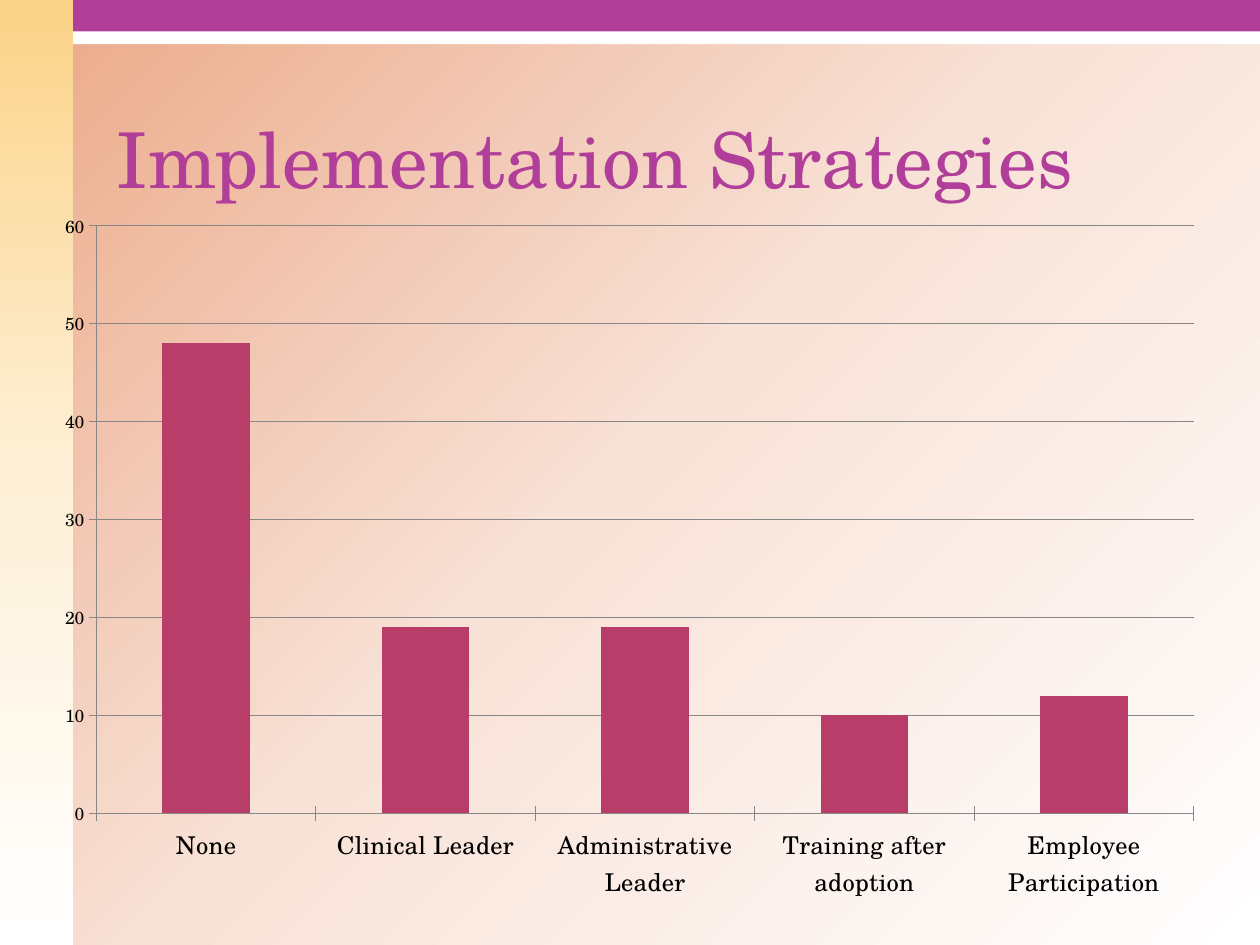
from copy import deepcopy

from pptx import Presentation
from pptx.chart.data import CategoryChartData
from pptx.dml.color import RGBColor
from pptx.enum.chart import XL_CHART_TYPE, XL_TICK_MARK
from pptx.enum.shapes import MSO_SHAPE
from pptx.enum.text import MSO_ANCHOR
from pptx.oxml.ns import qn
from pptx.util import Inches, Pt

COLUMN = XL_CHART_TYPE.COLUMN_CLUSTERED
CROSS = XL_TICK_MARK.CROSS
RECT = MSO_SHAPE.RECTANGLE
BOTTOM = MSO_ANCHOR.BOTTOM

WIDE, HIGH = 10, 7.5
SIDE = 0.58
FONT = "TeX Gyre Schola"
PURPLE, ROSE, GREY, BLACK, WHITE = "B13F9A", "B83D68", "878787", "000000", "FFFFFF"
PEACH = ("EBA786", "F8E2D7", WHITE)
GOLD = ("FBD388", "FEF0D7", WHITE)
VALUES = {
    "None": 48,
    "Clinical Leader": 19,
    "Administrative Leader": 19,
    "Training after adoption": 10,
    "Employee Participation": 12,
}


def tint(code):
    """Turn a hex string into a colour."""
    return RGBColor.from_string(code)


def style(font, size, code):
    """Set the face, size and colour of a font."""
    font.name, font.size = FONT, Pt(size)
    font.color.rgb = tint(code)


def blend(fill, root, codes, angle):
    """Fill with evenly spaced colours, the angle running clockwise."""
    fill.gradient()
    fill.gradient_angle = 360 - angle
    stops = next(root.iter(qn("a:gsLst")))
    while len(stops) < len(codes):
        stops.append(deepcopy(stops[0]))
    for i, (stop, code) in enumerate(zip(fill.gradient_stops, codes)):
        stop.position = i / (len(codes) - 1)
        stop.color.rgb = tint(code)


def band(slide, box, code=WHITE):
    """Add a plain bar without outline."""
    shape = slide.shapes.add_shape(RECT, *map(Inches, box))
    shape.shadow.inherit = False
    shape.line.fill.background()
    shape.fill.solid()
    shape.fill.fore_color.rgb = tint(code)
    return shape


def frame(slide):
    """Add the backdrop, the side bar and the top bars."""
    back = slide.background.fill
    blend(back, slide.element, PEACH, 45)
    band(slide, (0, 0, WIDE, 0.35))
    side = band(slide, (0, 0, SIDE, HIGH))
    blend(side.fill, side.element, GOLD, 90)
    band(slide, (SIDE, 0, WIDE - SIDE, 0.25), PURPLE)


def title(slide, box, text):
    """Add the heading at the foot of its box."""
    frame = slide.shapes.add_textbox(*map(Inches, box)).text_frame
    frame.word_wrap = True
    frame.vertical_anchor = BOTTOM
    line = frame.paragraphs[0]
    line.text = text
    style(line.font, 44, PURPLE)


def graph(slide, box, values):
    """Add the column chart."""
    data = CategoryChartData()
    data.categories = list(values)
    data.add_series("Series 1", list(values.values()))
    chart = slide.shapes.add_chart(COLUMN, *map(Inches, box), data).chart
    chart.has_legend = chart.has_title = False
    style(chart.font, 10, BLACK)
    plot = chart.plots[0]
    plot.gap_width = 150
    plot.vary_by_categories = False
    bars = plot.series[0].format.fill
    bars.solid()
    bars.fore_color.rgb = tint(ROSE)
    cats, vals = chart.category_axis, chart.value_axis
    style(cats.tick_labels.font, 14, BLACK)
    vals.minimum_scale, vals.maximum_scale, vals.major_unit = 0, 60, 10
    vals.has_major_gridlines = True
    cats.major_tick_mark = vals.major_tick_mark = CROSS
    for part in (cats, vals, vals.major_gridlines):
        part.format.line.color.rgb = tint(GREY)
        part.format.line.width = Pt(0.75)


def main():
    """Build and save the slide."""
    deck = Presentation()
    deck.slide_width, deck.slide_height = Inches(WIDE), Inches(HIGH)
    slide = deck.slides.add_slide(deck.slide_layouts[6])
    frame(slide)
    title(slide, (0.83, 0.42, 8.75, 1.25), "Implementation Strategies")
    graph(slide, (0.33, 1.58, 9.33, 5.67), VALUES)
    deck.save("out.pptx")


if __name__ == "__main__":
    main()
